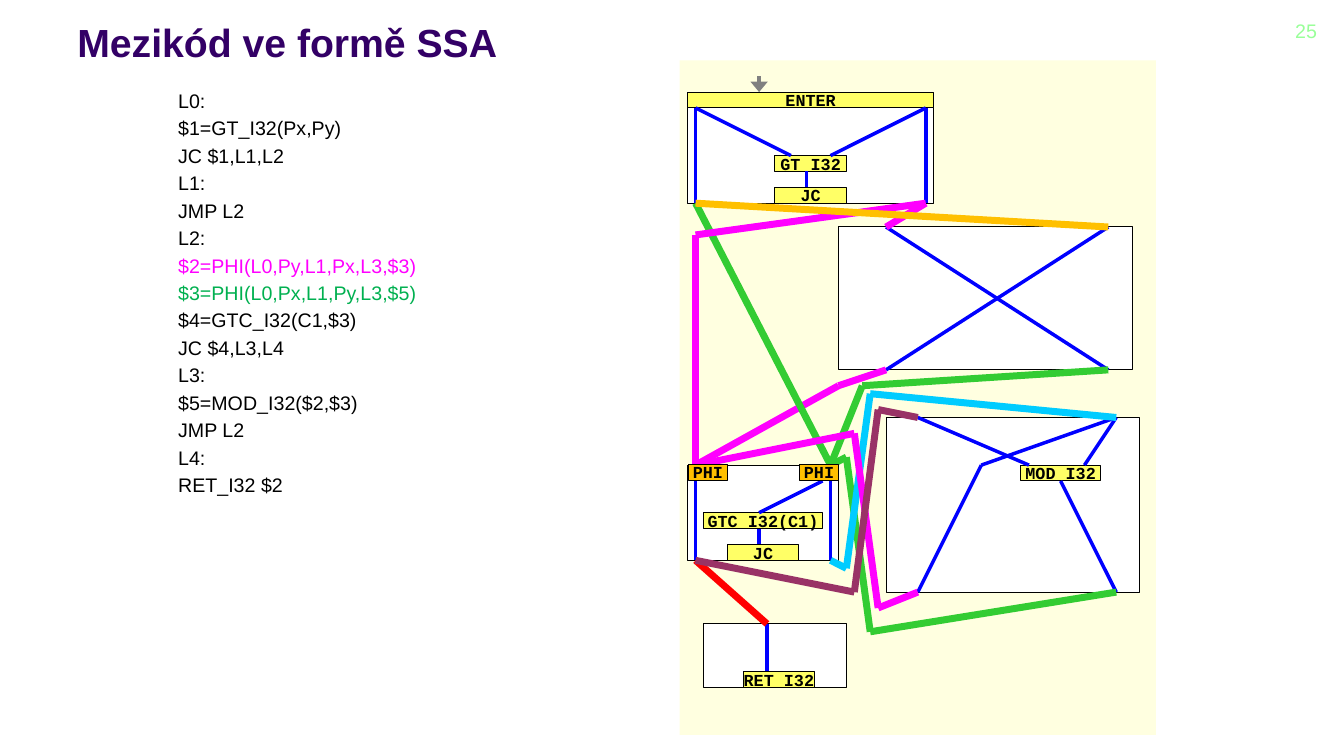
from itertools import pairwise

from lxml.etree import SubElement
from pptx import Presentation
from pptx.dml.color import RGBColor
from pptx.enum.shapes import MSO_CONNECTOR, MSO_SHAPE
from pptx.enum.text import MSO_ANCHOR, PP_ALIGN
from pptx.oxml.ns import qn
from pptx.util import Cm, Pt

COLORS = {
    "title": "330066", "number": "99FF99", "black": "000000",
    "panel": "FFFFE0", "white": "FFFFFF", "op": "FFFF66",
    "phi": "FFC000", "blue": "0000FF", "gray": "808080",
    "magenta": "FF00FF", "green": "33CC33", "orange": "FFC000",
    "red": "FF0000", "cyan": "00CCFF", "plum": "993366",
    "green_text": "00B050",
}
UNIT = 0.2

CODE = [
    ("L0:", "black"),
    ("$1=GT_I32(Px,Py)", "black"),
    ("JC $1,L1,L2", "black"),
    ("L1:", "black"),
    ("JMP L2", "black"),
    ("L2:", "black"),
    ("$2=PHI(L0,Py,L1,Px,L3,$3)", "magenta"),
    ("$3=PHI(L0,Px,L1,Py,L3,$5)", "green_text"),
    ("$4=GTC_I32(C1,$3)", "black"),
    ("JC $4,L3,L4", "black"),
    ("L3:", "black"),
    ("$5=MOD_I32($2,$3)", "black"),
    ("JMP L2", "black"),
    ("L4:", "black"),
    ("RET_I32 $2", "black"),
]

BLOCKS = [(1, 4, 31, 14), (1, 51, 19, 12), (3, 71, 18, 8),
          (26, 45, 32, 22), (20, 21, 37, 18)]

OPS = [
    ("GT_I32", (12, 12, 9, 2)),
    ("JC", (12, 16, 9, 2)),
    ("ENTER", (1, 4, 31, 2)),
    ("GTC_I32(C1)", (3, 57, 15, 2)),
    ("JC", (6, 61, 9, 2)),
    ("RET_I32", (8, 77, 9, 2)),
]
MOD = (43, 51, 10, 2)
PHIS = [(1.1, 50.9, 4.9, 2), (15.1, 50.9, 4.9, 2)]

INNER_FLOWS = [
    [(31, 6), (19, 12)],
    [(2, 6), (14, 12)],
    [(16, 14), (16, 16)],
    [(31, 6), (31, 18)],
    [(2, 6), (2, 18)],
    [(10, 59), (10, 61)],
    [(18, 53), (10, 57)],
    [(2, 51), (2, 63)],
    [(19, 51), (19, 63)],
    [(11, 71), (11, 77)],
    [(30, 45), (44, 51)],
    [(55, 45), (51, 51)],
    [(55, 45), (38, 51), (30, 67)],
    [(54, 21), (26, 39)],
    [(54, 39), (26, 21)],
]

BLOCK_FLOWS = [
    ("magenta", [(26, 39), (20, 41), (2, 51)]),
    ("green", [(2, 18), (19, 51)]),
    ("magenta", [(2, 51), (2, 22), (31, 18), (26, 21)]),
    ("orange", [(2, 18), (54, 21)]),
    ("green", [(54, 39), (23, 41), (19, 51)]),
    ("red", [(2, 63), (11, 71)]),
    ("green", [(55, 67), (24, 72), (21, 50), (19, 51)]),
    ("cyan", [(19, 63), (21, 64), (24, 42), (55, 45)]),
    ("magenta", [(30, 67), (25, 69), (22, 47), (2, 51)]),
    ("plum", [(2, 63), (22, 67), (25, 44), (30, 45)]),
]


def rgb(name):
    return RGBColor.from_string(COLORS[name])


def add_run(p, text, size, color, bold=False, font="Arial"):
    r = p.add_run()
    r.text = text
    r.font.name = font
    r.font.size = Pt(size)
    r.font.bold = bold
    r.font.color.rgb = rgb(color)


def add_text_frame(s, box):
    tf = s.shapes.add_textbox(*map(Cm, box)).text_frame
    tf.word_wrap = True
    return tf


def add_title(s, box):
    tf = add_text_frame(s, box)
    add_run(tf.paragraphs[0], "Mezikód ve formě SSA", 28, "title", True)


def add_number(s, box):
    p = add_text_frame(s, box).paragraphs[0]
    p.alignment = PP_ALIGN.RIGHT
    add_run(p, "25 ", 14, "number")


def add_code(s, box):
    tf = add_text_frame(s, box)
    for i, (text, color) in enumerate(CODE):
        p = tf.add_paragraph() if i else tf.paragraphs[0]
        if i:
            p.space_before = Pt(2.8)
        add_run(p, text, 14, color)


def add_graph(s, box):
    left, top, width, height = box

    def place(x, y):
        return Cm(left + x * UNIT), Cm(top + y * UNIT)

    def add_box(cells, fill, outlined=True):
        x, y, w, h = cells
        sp = s.shapes.add_shape(MSO_SHAPE.RECTANGLE, *place(x, y),
                                Cm(w * UNIT), Cm(h * UNIT))
        sp.shadow.inherit = False
        sp.fill.solid()
        sp.fill.fore_color.rgb = rgb(fill)
        if outlined:
            sp.line.color.rgb = rgb("black")
            sp.line.width = Pt(0.75)
        else:
            sp.line.fill.background()
        return sp

    def add_op(text, cells, fill="op"):
        sp = add_box(cells, fill)
        tf = sp.text_frame
        tf.margin_left = tf.margin_right = 0
        tf.margin_top = tf.margin_bottom = 0
        tf.word_wrap = False
        tf.vertical_anchor = MSO_ANCHOR.MIDDLE
        p = tf.paragraphs[0]
        p.alignment = PP_ALIGN.CENTER
        add_run(p, text, 12, "black", True, "Courier New")
        return sp

    def add_line(start, end, color, weight):
        line = s.shapes.add_connector(MSO_CONNECTOR.STRAIGHT,
                                      *place(*start), *place(*end))
        line.line.color.rgb = rgb(color)
        line.line.width = Pt(weight)
        SubElement(line._element.spPr, qn("a:effectLst"))
        return line

    add_box((0, 0, width / UNIT, height / UNIT), "panel", False)
    for cells in BLOCKS:
        add_box(cells, "white")
    for text, cells in OPS:
        add_op(text, cells)
    mod = add_op("MOD_I32", MOD)

    arrow = add_line((10, 2), (10, 4), "gray", 2.5)
    SubElement(arrow.line._get_or_add_ln(), qn("a:tailEnd"),
               type="triangle", w="lg", len="med")
    add_line((48, 53), (55, 67), "blue", 2.5).begin_connect(mod, 2)
    for points in INNER_FLOWS:
        for start, end in pairwise(points):
            add_line(start, end, "blue", 2.5)
    for color, points in BLOCK_FLOWS:
        for start, end in pairwise(points):
            add_line(start, end, color, 5)
    for cells in PHIS:
        add_op("PHI", cells, "phi")


def main():
    prs = Presentation()
    prs.slide_width, prs.slide_height = Cm(33.87), Cm(19.05)
    s = prs.slides.add_slide(prs.slide_layouts[6])
    add_title(s, (1.7, 0.33, 27.94, 1.98))
    add_number(s, (31.73, 0.34, 1.85, 1.27))
    add_code(s, (4.24, 2.11, 7.9, 14.91))
    add_graph(s, (17.13, 1.52, 12, 17))
    prs.save("out.pptx")


if __name__ == "__main__":
    main()
